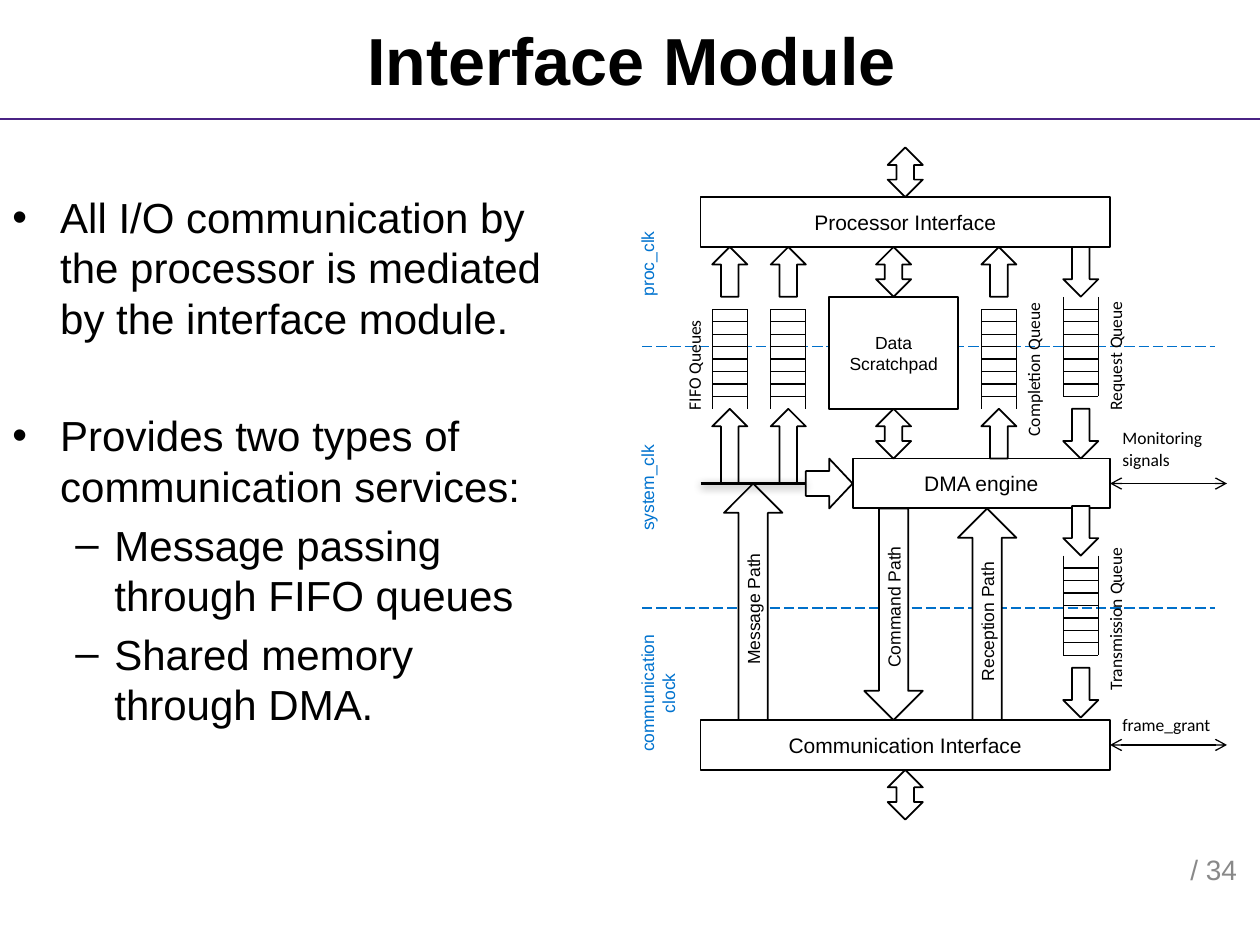
import lxml.etree
import pptx
import pptx.dml.color
import pptx.enum.dml
import pptx.enum.shapes
import pptx.enum.text
import pptx.oxml
import pptx.oxml.ns
import pptx.util

SHAPE = pptx.enum.shapes.MSO_SHAPE
ALIGN = pptx.enum.text.PP_ALIGN
ANCHOR = pptx.enum.text.MSO_ANCHOR
Inches, Pt = pptx.util.Inches, pptx.util.Pt
hex_color = pptx.dml.color.RGBColor.from_string
qn = pptx.oxml.ns.qn

# Grids: left edge, top edge, column width, row height (inches)
PAGE = (0, 0, 10 / 100, 7.5 / 75)
DIAGRAM = (5.56, 1.17, 3.25 / 35, 4.94 / 50)
BLUE = "0073CF"

presentation = pptx.Presentation()
presentation.slide_width, presentation.slide_height = Inches(10), Inches(7.5)
slide = presentation.slides.add_slide(presentation.slide_layouts[6])


def add_block(text, col, row, cols, rows, kind=None, grid=DIAGRAM, rotation=0, size=10,
              font="Arial", color="000000", bold=False, align=ALIGN.LEFT, anchor=ANCHOR.TOP):
    """Add a text box, or a preset shape if kind is given; the box is where it shows after rotation."""
    left, top = grid[0] + col * grid[2], grid[1] + row * grid[3]
    width, height = cols * grid[2], rows * grid[3]
    if rotation:
        left, top = left + (width - height) / 2, top + (height - width) / 2
        width, height = height, width
    box = [Inches(length) for length in (left, top, width, height)]
    if kind is None:
        shape = slide.shapes.add_textbox(*box)
    else:
        shape = slide.shapes.add_shape(kind, *box)
        shape.shadow.inherit = False
        shape.fill.solid()
        shape.fill.fore_color.rgb = hex_color("FFFFFF")
        shape.line.color.rgb = hex_color("000000")
        shape.line.width = Pt(1)
        align, anchor = ALIGN.CENTER, ANCHOR.MIDDLE
    shape.rotation = rotation
    frame = shape.text_frame
    frame.word_wrap = True
    frame.vertical_anchor = anchor
    if text:
        frame.text = text
    for paragraph in frame.paragraphs:
        paragraph.alignment = align
        for run in paragraph.runs:
            run.font.size, run.font.name, run.font.bold = Pt(size), font, bold
            run.font.color.rgb = hex_color(color)
    return shape


def add_line(col, row, end_col, end_row, color="000000", width=0.75, grid=DIAGRAM):
    x, y, col_width, row_height = grid
    line = slide.shapes.add_connector(
        pptx.enum.shapes.MSO_CONNECTOR.STRAIGHT,
        Inches(x + col * col_width), Inches(y + row * row_height),
        Inches(x + end_col * col_width), Inches(y + end_row * row_height))
    line.line.color.rgb = hex_color(color)
    line.line.width = Pt(width)
    lxml.etree.SubElement(line._element.spPr, qn("a:effectLst"))
    return line


# Page furniture and title
add_line(0, 9.45, 100, 9.45, color="4A2384", width=1, grid=PAGE)
add_block("/ 34", 93.5, 66.8, 10.6, 4, grid=PAGE, size=16, color="898989", anchor=ANCHOR.BOTTOM)
add_block("Interface Module", 3.3, 0, 93.7, 9.4, grid=PAGE, size=38, bold=True,
          align=ALIGN.CENTER, anchor=ANCHOR.MIDDLE)

# Bullets: text, bullet, left indent, hanging indent, space before
bullets = [
    ("All I/O communication by the processor is mediated by the interface module.", "•", 0.38, 0.38, 0),
    ("Provides two types of communication services:", "•", 0.38, 0.38, 38.4),
    ("Message passing through FIFO queues", "–", 0.81, 0.31, 4.8),
    ("Shared memory through DMA.", "–", 0.81, 0.31, 4.8),
]
body = add_block("\n".join(bullet[0] for bullet in bullets), 0, 14.7, 45.4, 58.5, grid=PAGE, size=24)
for paragraph, (_, mark, indent, hanging, space) in zip(body.text_frame.paragraphs, bullets):
    paragraph.line_spacing = Pt(28.8)
    paragraph.space_before = Pt(space)
    properties = paragraph._p.get_or_add_pPr()
    properties.set("marL", str(Inches(indent)))
    properties.set("indent", str(-Inches(hanging)))
    lxml.etree.SubElement(properties, qn("a:buFont")).set("typeface", "Arial")
    lxml.etree.SubElement(properties, qn("a:buChar")).set("char", mark)

# Clock domain borders
for row in (16, 37):
    border = add_line(-5, row, 44, row, color="0070CA")
    border.line.dash_style = pptx.enum.dml.MSO_LINE.LONG_DASH

# Modules
for text, col, row, cols, rows, size in [
    ("Processor Interface", 0, 4, 35, 4, 12),
    ("Data\nScratchpad", 11, 12, 11, 9, 10),
    ("Communication Interface", 0, 46, 35, 4, 12),
    ("DMA engine", 13, 25, 22, 4, 12),
]:
    add_block(text, col, row, cols, rows, kind=SHAPE.RECTANGLE, size=size)

# Queues: column, top of the rails, first of eight rungs
for col, top, first_rung in [(1, 13, 13), (6, 13, 13), (24, 13, 13), (31, 12, 13), (31, 32.8, 33.8)]:
    for rail in (col, col + 3):
        add_line(rail, top, rail, top + 8)
    for rung in range(8):
        add_line(col, first_rung + rung, col + 3, first_rung + rung)

# Block arrows, three columns wide: kind, height, places
for kind, rows, places in [
    (SHAPE.UP_DOWN_ARROW, 4, [(16, 0), (15, 8), (15, 21), (16, 50)]),
    (SHAPE.UP_ARROW, 4, [(1, 8), (6, 8), (24, 8), (24, 21)]),
    (SHAPE.UP_ARROW, 6, [(1, 21), (6, 21)]),
    (SHAPE.DOWN_ARROW, 4, [(31, 8), (31, 21), (31, 28.8), (31, 41.8)]),
]:
    for col, row in places:
        add_block("", col, row, 3, rows, kind=kind)
add_block("", 9, 25, 4, 4, kind=SHAPE.RIGHT_ARROW)

# Paths down to the communication interface
for text, col, row, kind in [
    ("Message Path", 2, 27, SHAPE.RIGHT_ARROW),
    ("Reception Path", 22, 29, SHAPE.RIGHT_ARROW),
    ("Command Path", 14, 29, SHAPE.LEFT_ARROW),
]:
    add_block(text, col, row, 5, 46 - row, kind=kind, rotation=270)

# Message bus with its soft shadow
bus = add_line(0, 27, 9, 27, width=2)
shadow = lxml.etree.SubElement(bus._element.spPr.find(qn("a:effectLst")), qn("a:outerShdw"),
                               blurRad=str(Pt(5)), dist=str(Pt(1.6)), dir="5400000", rotWithShape="0")
shadow_color = lxml.etree.SubElement(shadow, qn("a:srgbClr"), val="000000")
lxml.etree.SubElement(shadow_color, qn("a:alpha"), val="38000")

# External signals
for row in (27, 48):
    signal = add_line(35, row, 45, row)
    for end in ("a:headEnd", "a:tailEnd"):
        lxml.etree.SubElement(signal.line._get_or_add_ln(), qn(end), type="arrow")
add_block("Monitoring\nsignals", 35, 22, 10, 5.3, font="Calibri")
add_block("frame_grant", 35, 45, 11, 3.2, font="Calibri")

# Upright labels
for text, col, row, rows in [
    ("FIFO Queues", -2, 11, 11.1),
    ("Completion Queue", 27, 8.9, 15.3),
    ("Request Queue", 34, 9.1, 13),
    ("Transmission Queue", 34, 28.3, 16.3),
]:
    add_block(text, col, row, 3.2, rows, rotation=270, font="Calibri")
for text, row, cols, rows in [
    ("proc_clk", 5, 3.2, 8.7),
    ("system_clk", 22, 3.2, 10.7),
    ("communication\nclock", 37, 5.3, 13.7),
]:
    add_block(text, -6, row, cols, rows, rotation=270, color=BLUE, align=ALIGN.CENTER)

presentation.save("out.pptx")
